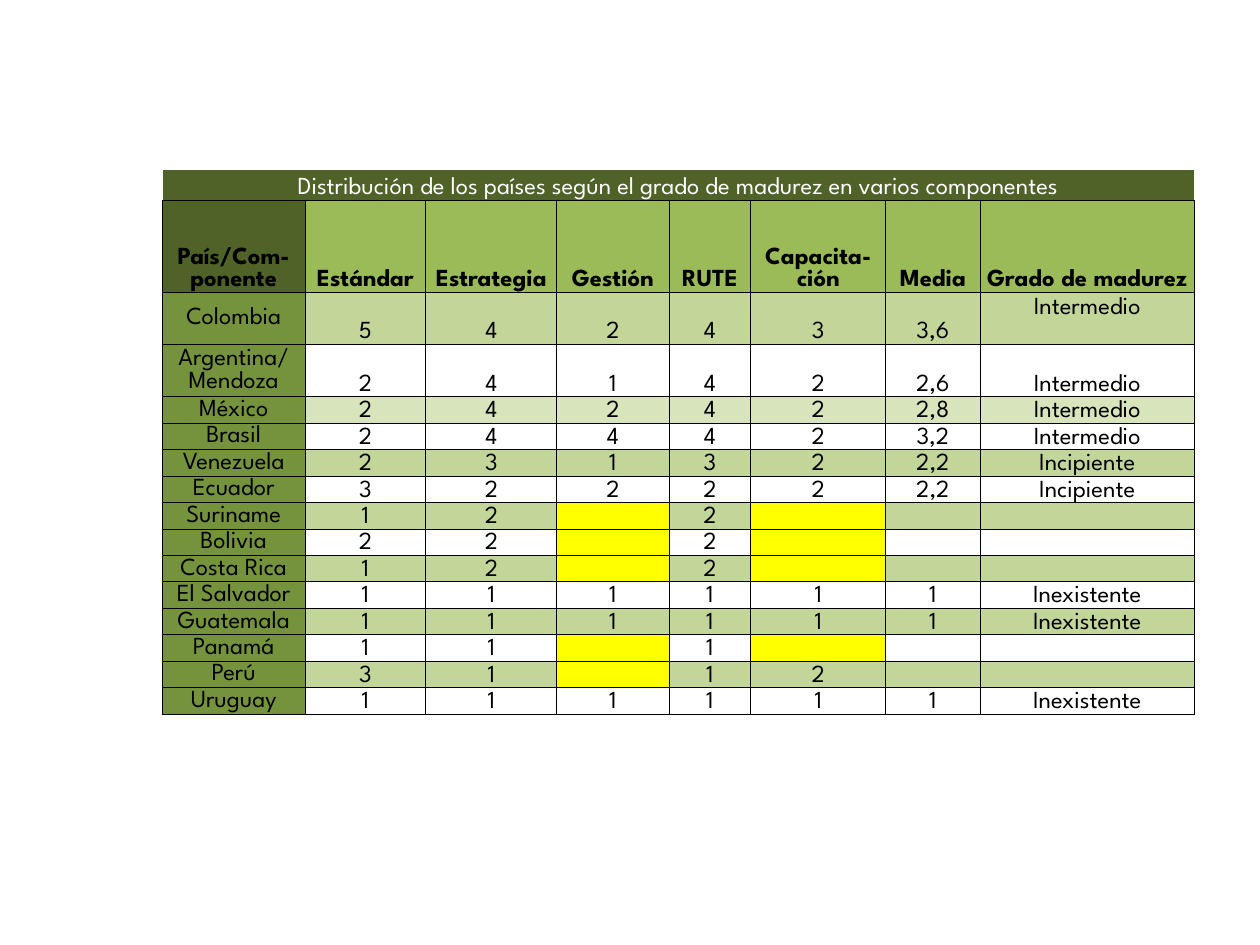
import pptx
import pptx.dml.color
import pptx.enum.text
import pptx.oxml.ns
import pptx.util
from lxml import etree

FONT, FONT_SIZE = "League Spartan", 14
BLACK, WHITE, YELLOW = "000000", "FFFFFF", "FFFF00"
DARK, HEADER, COUNTRY = "4F6228", "9BBB59", "75923C"
BAND, PALE_BAND = "C2D69A", "D7E4BC"

TITLE = "Distribución de los países según el grado de madurez en varios componentes"
HEADINGS = ["País/Com-ponente", "Estándar", "Estrategia", "Gestión", "RUTE",
            "Capacita-ción", "Media", "Grado de madurez"]
# None marks a missing score, shown in yellow.
COUNTRIES = [
    ["Colombia", "5", "4", "2", "4", "3", "3,6", "Intermedio"],
    ["Argentina/ Mendoza", "2", "4", "1", "4", "2", "2,6", "Intermedio"],
    ["México", "2", "4", "2", "4", "2", "2,8", "Intermedio"],
    ["Brasil", "2", "4", "4", "4", "2", "3,2", "Intermedio"],
    ["Venezuela", "2", "3", "1", "3", "2", "2,2", "Incipiente"],
    ["Ecuador", "3", "2", "2", "2", "2", "2,2", "Incipiente"],
    ["Suriname", "1", "2", None, "2", None, "", ""],
    ["Bolivia", "2", "2", None, "2", None, "", ""],
    ["Costa Rica", "1", "2", None, "2", None, "", ""],
    ["El Salvador", "1", "1", "1", "1", "1", "1", "Inexistente"],
    ["Guatemala", "1", "1", "1", "1", "1", "1", "Inexistente"],
    ["Panamá", "1", "1", None, "1", None, "", ""],
    ["Perú", "3", "1", None, "1", "2", "", ""],
    ["Uruguay", "1", "1", "1", "1", "1", "1", "Inexistente"],
]

TABLE_LEFT, TABLE_TOP = 1.29, 1.35
COLUMN_WIDTHS = [1.13, 0.96, 1.04, 0.89, 0.65, 1.07, 0.75, 1.7]
ROW_HEIGHTS = [0.24, 0.73, 0.41, 0.42] + [0.21] * (len(COUNTRIES) - 2)

ANCHOR = pptx.enum.text.MSO_ANCHOR
inches = pptx.util.Inches


def rgb(color):
    return pptx.dml.color.RGBColor.from_string(color)


def add_borders(cell, sides):
    """Draw thin black lines on the given sides (of "LRTB") and clear the others."""
    properties = cell._tc.get_or_add_tcPr()
    for position, side in enumerate("LRTB"):
        line = etree.Element(pptx.oxml.ns.qn(f"a:ln{side}"), w=str(pptx.util.Pt(0.5)))
        if side in sides:
            fill = etree.SubElement(line, pptx.oxml.ns.qn("a:solidFill"))
            etree.SubElement(fill, pptx.oxml.ns.qn("a:srgbClr"), val=BLACK)
        else:
            etree.SubElement(line, pptx.oxml.ns.qn("a:noFill"))
        properties.insert(position, line)


def format_cell(cell, text, fill, color=BLACK, bold=False, anchor=ANCHOR.BOTTOM, borders="LRTB"):
    cell.fill.solid()
    cell.fill.fore_color.rgb = rgb(fill)
    add_borders(cell, borders)
    cell.vertical_anchor = anchor
    cell.margin_left = cell.margin_right = cell.margin_top = inches(0.01)
    cell.margin_bottom = 0
    paragraph = cell.text_frame.paragraphs[0]
    paragraph.alignment = pptx.enum.text.PP_ALIGN.CENTER
    if text:
        run = paragraph.add_run()
        run.text = text
        run.font.name = FONT
        run.font.size = pptx.util.Pt(FONT_SIZE)
        run.font.bold = bold
        run.font.color.rgb = rgb(color)
    else:
        # The end mark's size keeps an empty row from growing.
        end_mark = etree.SubElement(paragraph._p, pptx.oxml.ns.qn("a:endParaRPr"),
                                    sz=str(FONT_SIZE * 100))
        etree.SubElement(end_mark, pptx.oxml.ns.qn("a:latin"), typeface=FONT)


def band_color(index):
    if COUNTRIES[index][0] == "México":
        return PALE_BAND
    # Bands alternate, starting anew at Venezuela.
    banded = index == 0 or (index >= 4 and index % 2 == 0)
    return BAND if banded else WHITE


def fill_table(table):
    for column, width in zip(table.columns, COLUMN_WIDTHS):
        column.width = inches(width)
    for row, height in zip(table.rows, ROW_HEIGHTS):
        row.height = inches(height)

    last = len(HEADINGS) - 1
    table.cell(0, 0).merge(table.cell(0, last))
    for column, heading in enumerate(HEADINGS):
        format_cell(table.cell(0, column), "" if column else TITLE, DARK, WHITE, borders="B")
        format_cell(table.cell(1, column), heading, HEADER if column else DARK, bold=True)

    for index, (country, *values) in enumerate(COUNTRIES):
        row = index + 2
        format_cell(table.cell(row, 0), country, COUNTRY, anchor=ANCHOR.MIDDLE)
        for column, value in enumerate(values, start=1):
            fill = YELLOW if value is None else band_color(index)
            format_cell(table.cell(row, column), value, fill)

    first_grade = table.cell(2, last)
    first_grade.vertical_anchor = ANCHOR.TOP
    first_grade.margin_top = inches(0.04)


def main():
    presentation = pptx.Presentation()
    presentation.slide_width, presentation.slide_height = inches(10), inches(7.5)
    slide = presentation.slides.add_slide(presentation.slide_layouts[6])
    frame = slide.shapes.add_table(
        len(ROW_HEIGHTS), len(COLUMN_WIDTHS), inches(TABLE_LEFT), inches(TABLE_TOP),
        inches(sum(COLUMN_WIDTHS)), inches(sum(ROW_HEIGHTS)))
    frame.table.first_row = frame.table.horz_banding = False
    fill_table(frame.table)
    presentation.save("out.pptx")


if __name__ == "__main__":
    main()
